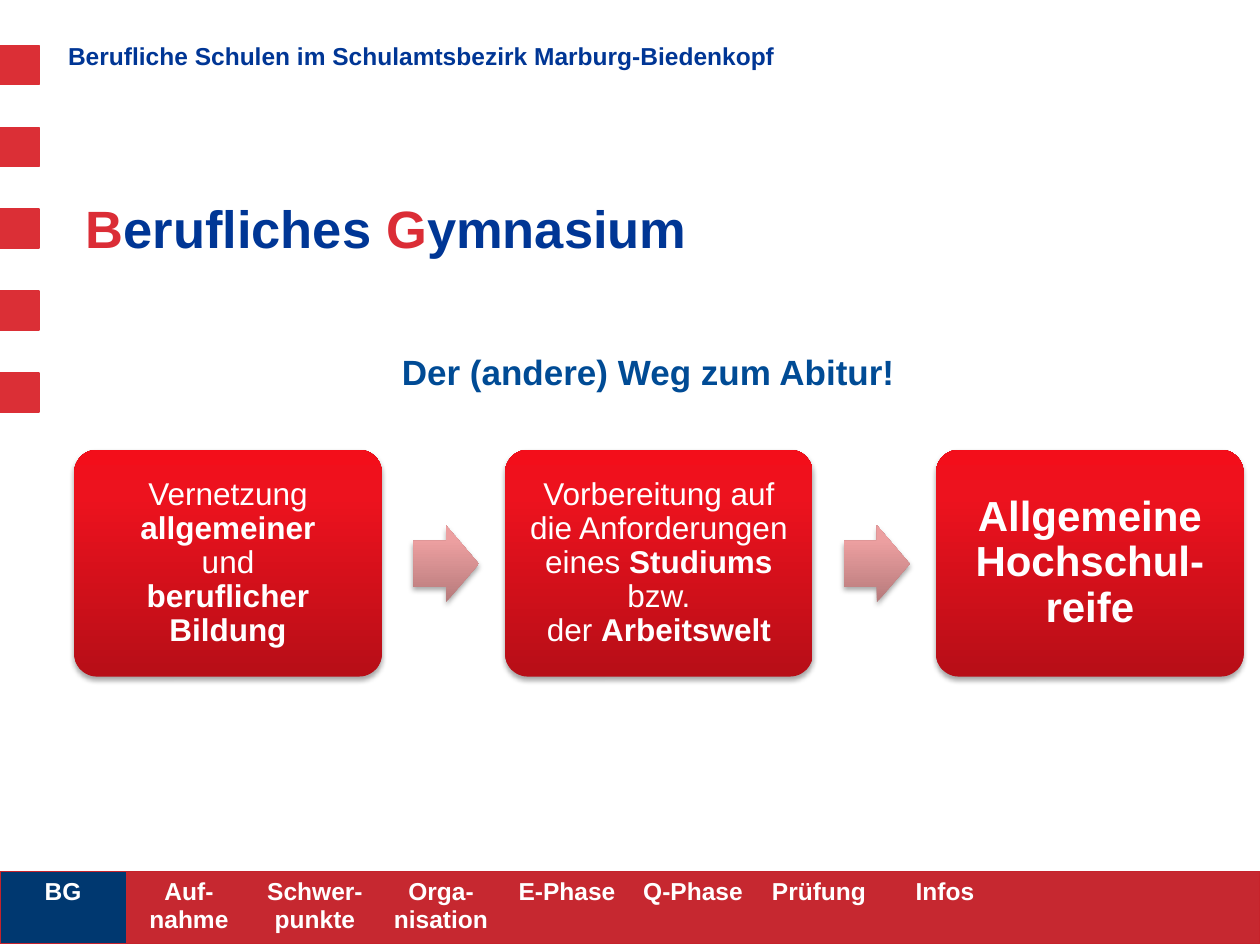
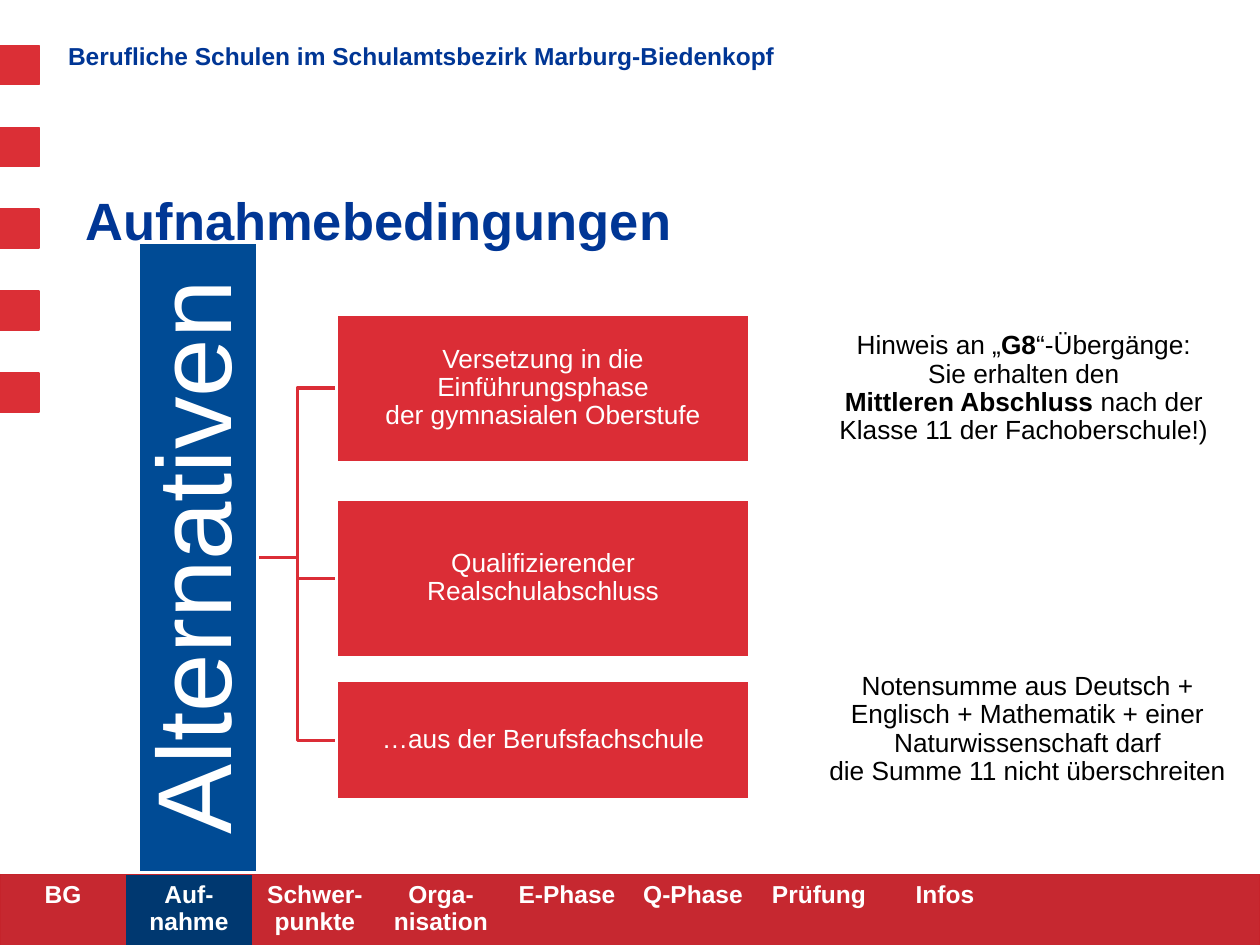
"""Builds two slides on the vocational grammar school: its idea and its admission rules."""
from copy import deepcopy
from dataclasses import dataclass
from typing import Any, NamedTuple, Optional

from lxml.etree import SubElement
from pptx import Presentation
from pptx.dml.color import RGBColor as Color
from pptx.enum.shapes import MSO_CONNECTOR as Connector, MSO_SHAPE as Preset
from pptx.enum.text import MSO_ANCHOR as Anchor, PP_ALIGN as Align
from pptx.oxml.ns import qn
from pptx.util import Emu, Inches, Pt

SLIDE_WIDTH, SLIDE_HEIGHT = Inches(10), Inches(7.5)
COLUMN, ROW = SLIDE_WIDTH / 10, SLIDE_HEIGHT / 7.5
PLAIN_TABLE_STYLE = "{2D5ABB26-0587-4C30-8999-92F81FD0307C}"
HEADER = "Berufliche Schulen im Schulamtsbezirk Marburg-Biedenkopf"
CHAPTERS = ("BG", "Auf-nahme", "Schwer-punkte", "Orga-nisation", "E-Phase",
            "Q-Phase", "Prüfung", "Infos", "", "")


@dataclass(frozen=True)
class Theme:
    font: str = "Arial"
    white: str = "FFFFFF"
    black: str = "000000"
    navy: str = "003695"
    blue: str = "004B95"
    active: str = "003870"
    red: str = "DB2D36"
    square: str = "DB2F36"
    band: str = "C62830"
    band_edge: str = "C5232B"
    step_stops: tuple = ((0, "B70E17"), (0.8, "ED121E"), (1, "F30E1A"))
    arrow_stops: tuple = ((0, "B67A7B"), (0.8, "EC9FA0"), (1, "EE9EA0"))
    title_size: int = 30
    vertical_size: int = 60
    goal_size: int = 24
    subtitle_size: int = 20
    step_size: int = 18
    box_size: int = 15
    small_size: int = 14


THEME = Theme()


class Box(NamedTuple):
    """Place on the slide, in grid columns and rows."""
    left: float
    top: float
    width: float
    height: float

    @property
    def middle(self) -> float:
        return self.top + self.height / 2

    def lengths(self) -> tuple:
        return (Emu(round(self.left * COLUMN)), Emu(round(self.top * ROW)),
                Emu(round(self.width * COLUMN)), Emu(round(self.height * ROW)))


class Run(NamedTuple):
    """Piece of text with its own weight and colour."""
    text: str
    bold: bool = False
    color: Optional[str] = None


@dataclass(frozen=True)
class Style:
    """Look of a text block; margins are left, top, right, bottom in inches."""
    size: int
    color: str
    align: Any = Align.CENTER
    anchor: Any = Anchor.MIDDLE
    margins: tuple = (0.01,) * 4
    spacing: float = 0.9


@dataclass(frozen=True)
class Step:
    """Rounded box in the chain of steps."""
    runs: tuple
    size: int = THEME.step_size
    margin: float = 0.07


@dataclass(frozen=True)
class Panel:
    """Filled rectangle with a white edge."""
    box: Box
    runs: tuple
    fill: str = THEME.red
    color: str = THEME.white
    size: int = THEME.box_size
    margin: float = 0.01
    rotation: int = 0


def apply(target: Any, values: dict) -> None:
    """Set every attribute named in the dict."""
    for name, value in values.items():
        setattr(target, name, value)


def write_runs(paragraph: Any, runs: tuple, size: int, color: str) -> None:
    """Fill a paragraph with runs, turning line feeds into line breaks."""
    for piece in runs:
        for number, line in enumerate(piece.text.split("\n")):
            if number:
                paragraph.add_line_break()
            if line:
                run = paragraph.add_run()
                run.text = line
                apply(run.font, {"name": THEME.font, "size": Pt(size), "bold": piece.bold})
                run.font.color.rgb = Color.from_string(piece.color or color)


def write(shape: Any, runs: tuple, style: Style) -> None:
    """Format a shape's text frame and write one paragraph."""
    left, top, right, bottom = (Inches(margin) for margin in style.margins)
    frame = shape.text_frame
    apply(frame, {"word_wrap": True, "vertical_anchor": style.anchor,
                  "margin_left": left, "margin_top": top,
                  "margin_right": right, "margin_bottom": bottom})
    paragraph = frame.paragraphs[0]
    apply(paragraph, {"alignment": style.align, "line_spacing": style.spacing})
    write_runs(paragraph, runs, style.size, style.color)


def add_solid(slide: Any, box: Box, fill: str, edge: str, width: float) -> Any:
    """Add a flat rectangle."""
    shape = slide.shapes.add_shape(Preset.RECTANGLE, *box.lengths())
    shape.shadow.inherit = False
    shape.fill.solid()
    shape.fill.fore_color.rgb = Color.from_string(fill)
    shape.line.color.rgb = Color.from_string(edge)
    shape.line.width = Pt(width)
    return shape


def add_glossy(slide: Any, preset: Any, box: Box, stops: tuple, adjustments: tuple) -> Any:
    """Add a shape with an upward three-stop gradient and a soft shadow."""
    shape = slide.shapes.add_shape(preset, *box.lengths())
    for number, value in enumerate(adjustments):
        shape.adjustments[number] = value
    shape.line.fill.background()
    shape.fill.gradient()
    shape.fill.gradient_angle = 90
    properties = shape._element.spPr
    stop_list = properties.find(".//" + qn("a:gsLst"))
    stop_list.append(deepcopy(stop_list[-1]))
    for stop, (position, color) in zip(shape.fill.gradient_stops, stops):
        stop.position = position
        stop.color.rgb = Color.from_string(color)
    shape.shadow.inherit = False
    shadow = SubElement(properties.find(qn("a:effectLst")), qn("a:outerShdw"),
                        blurRad=str(Pt(3.1)), dist=str(Pt(1.8)), dir="5400000", rotWithShape="0")
    shade = SubElement(shadow, qn("a:srgbClr"), val=THEME.black)
    SubElement(shade, qn("a:alpha"), val="35000")
    return shape


def add_label(slide: Any, box: Box, runs: tuple, style: Style) -> None:
    """Add a text box."""
    write(slide.shapes.add_textbox(*box.lengths()), runs, style)


def add_chapter_band(slide: Any, top: float, active: int) -> None:
    """Add the chapter table with one chapter highlighted."""
    band = Box(0, top, 10, 0.55)
    table = slide.shapes.add_table(1, len(CHAPTERS), *band.lengths()).table
    apply(table, {"first_row": False, "horz_banding": False})
    table._tbl.tblPr.find(qn("a:tableStyleId")).text = PLAIN_TABLE_STYLE
    last = len(CHAPTERS) - 1
    for number, chapter in enumerate(CHAPTERS):
        cell = table.cell(0, number)
        sides = ["L"] * (number == 0) + ["R"] * (number == last) + ["T", "B"]
        for side in sides:
            line = SubElement(cell._tc.get_or_add_tcPr(), qn(f"a:ln{side}"), w=str(Pt(0.75)))
            SubElement(SubElement(line, qn("a:solidFill")), qn("a:srgbClr"), val=THEME.band_edge)
        cell.fill.solid()
        cell.fill.fore_color.rgb = Color.from_string(
            THEME.active if number == active else THEME.band)
        paragraph = cell.text_frame.paragraphs[0]
        paragraph.alignment = Align.CENTER
        write_runs(paragraph, (Run(chapter, True),), THEME.small_size, THEME.white)


def add_base_slide(presentation: Any, title: tuple, title_top: float,
                   band_top: float, active: int) -> Any:
    """Add a slide with squares, header, title and chapter band."""
    slide = presentation.slides.add_slide(presentation.slide_layouts[5])
    for number in range(5):
        square = Box(0, 0.36 + number * 0.65, 0.31, 0.31)
        add_solid(slide, square, THEME.square, THEME.square, 0.75)
    add_label(slide, Box(0.54, 0.3, 8.03, 0.31), (Run(HEADER, True),),
              Style(THEME.small_size, THEME.navy, Align.LEFT, Anchor.TOP, (0, 0.05, 0, 0.05)))
    left, top, width, height = Box(0.58, title_top, 9.22, 1.08).lengths()
    placeholder = slide.shapes.title
    apply(placeholder, {"left": left, "top": top, "width": width, "height": height})
    write(placeholder, title, Style(THEME.title_size, THEME.navy, Align.LEFT, Anchor.BOTTOM,
                                    (0.1, 0, 0.1, 0), 1.0))
    add_chapter_band(slide, band_top, active)
    return slide


def add_panel(slide: Any, panel: Panel) -> None:
    """Add a panel and its text."""
    shape = add_solid(slide, panel.box, panel.fill, THEME.white, 2)
    shape.rotation = panel.rotation
    write(shape, panel.runs, Style(panel.size, panel.color, margins=(panel.margin,) * 4))


def add_branch(slide: Any, start: tuple, end: tuple) -> None:
    """Add an elbow line between two grid points."""
    points = [Emu(round(value * unit)) for point in (start, end)
              for value, unit in zip(point, (COLUMN, ROW))]
    connector = slide.shapes.add_connector(Connector.ELBOW, *points)
    connector.line.color.rgb = Color.from_string(THEME.red)
    connector.line.width = Pt(2)
    SubElement(connector._element.spPr, qn("a:effectLst"))


def build_overview(presentation: Any) -> None:
    """Build the slide with the three steps to the Abitur."""
    title = (Run("B", True, THEME.red), Run("erufliches ", True),
             Run("G", True, THEME.red), Run("ymnasium", True))
    slide = add_base_slide(presentation, title, 0.98, 6.92, 0)
    steps = (
        Step((Run("Vernetzung "), Run("allgemeiner\n", True), Run("und\n"),
              Run("beruflicher Bildung", True))),
        Step((Run("Vorbereitung auf die Anforderungen eines "), Run("Studiums", True),
              Run(" bzw.\nder "), Run("Arbeitswelt", True))),
        Step((Run("Allgemeine Hochschul-reife", True),), THEME.goal_size, 0.1),
    )
    pitch = 3.42
    for number, step in enumerate(steps):
        box = Box(0.59 + number * pitch, 3.57, 2.44, 1.8)
        shape = add_glossy(slide, Preset.ROUNDED_RECTANGLE, box, THEME.step_stops, (0.1,))
        write(shape, step.runs, Style(step.size, THEME.white, margins=(step.margin,) * 4))
        if number < len(steps) - 1:
            arrow = Box(box.left + 2.69, 4.17, 0.52, 0.61)
            add_glossy(slide, Preset.RIGHT_ARROW, arrow, THEME.arrow_stops, (0.6, 0.5))
    add_label(slide, Box(3.09, 2.73, 4.41, 0.44), (Run("Der (andere) Weg zum Abitur!", True),),
              Style(THEME.subtitle_size, THEME.blue, Align.LEFT, Anchor.TOP,
                    (0.1, 0.05, 0.1, 0.05), 1.0))


def build_admission(presentation: Any) -> None:
    """Build the slide with the alternative admission routes."""
    slide = add_base_slide(presentation, (Run("Aufnahmebedingungen", True),), 0.91, 6.94, 1)
    routes = (
        Panel(Box(2.67, 2.49, 3.28, 1.18),
              (Run("Versetzung in die Einführungsphase\nder gymnasialen Oberstufe"),)),
        Panel(Box(2.67, 3.96, 3.28, 1.26), (Run("Qualifizierender Realschulabschluss"),)),
        Panel(Box(2.67, 5.4, 3.28, 0.95), (Run("…aus der Berufsfachschule"),)),
    )
    hub = Panel(Box(-0.93, 3.95, 5, 0.95), (Run("Alternativen"),), THEME.blue,
                size=THEME.vertical_size, margin=0.04, rotation=270)
    notes = (
        Panel(Box(6.57, 2.61, 3.11, 0.95),
              (Run("Hinweis an „"), Run("G8", True), Run("“-Übergänge:\nSie erhalten den\n"),
               Run("Mittleren Abschluss ", True),
               Run("nach der Klasse 11 der Fachoberschule!)")), THEME.white, THEME.black),
        Panel(Box(6.5, 5.25, 3.31, 1.08),
              (Run("Notensumme aus Deutsch + Englisch + Mathematik + einer "
                   "Naturwissenschaft darf\ndie Summe 11 nicht überschreiten"),),
              THEME.white, THEME.black),
    )
    for route in routes:
        add_branch(slide, (2.05, hub.box.middle), (route.box.left, route.box.middle))
    for panel in (hub, *routes, *notes):
        add_panel(slide, panel)


def main() -> None:
    """Build and save the presentation."""
    presentation = Presentation()
    apply(presentation, {"slide_width": SLIDE_WIDTH, "slide_height": SLIDE_HEIGHT})
    build_overview(presentation)
    build_admission(presentation)
    presentation.save("out.pptx")


if __name__ == "__main__":
    main()
